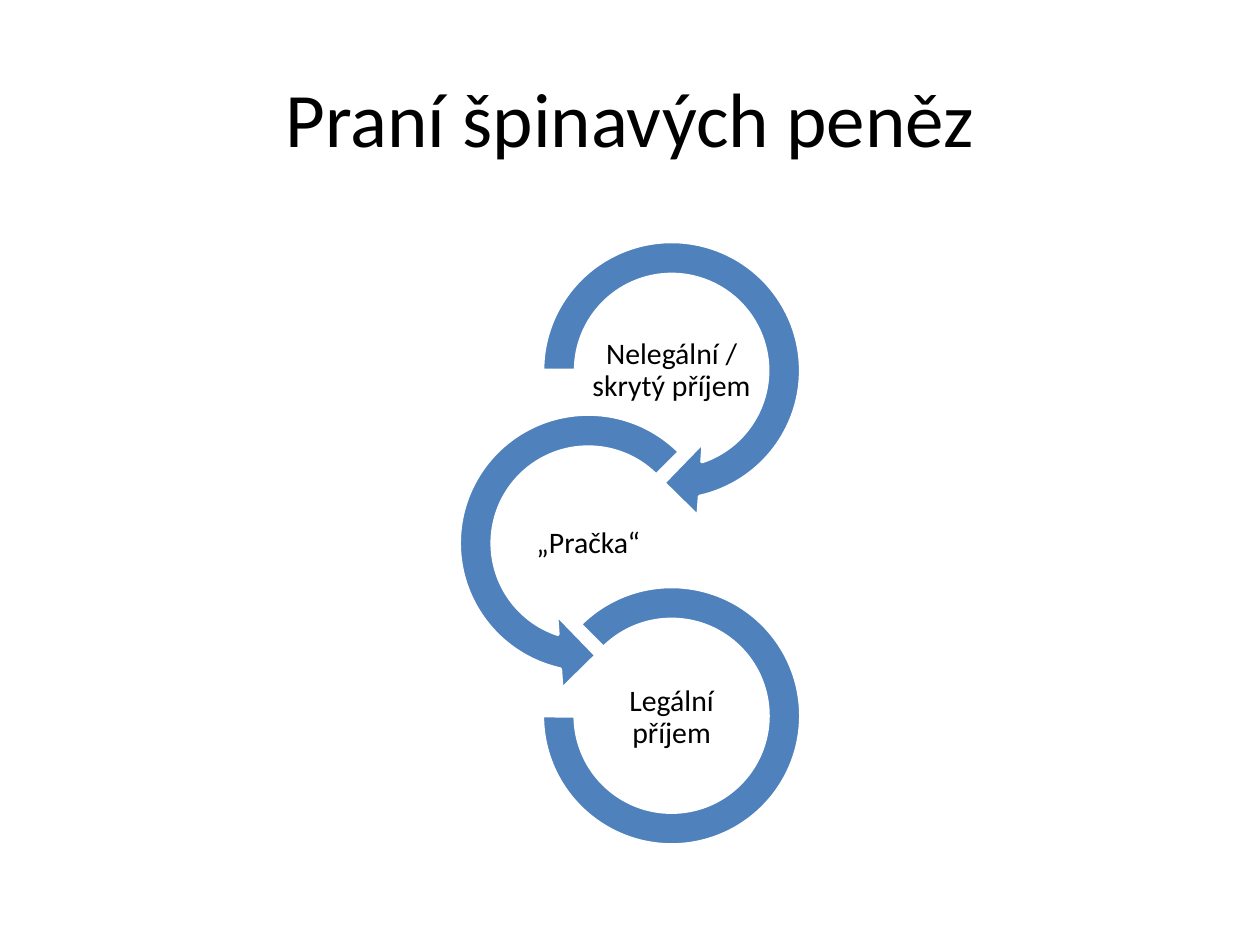
from pptx import Presentation
from pptx.dml.color import RGBColor
from pptx.enum.shapes import MSO_SHAPE
from pptx.enum.text import MSO_ANCHOR, PP_ALIGN
from pptx.util import Cm, Pt

RIGHT_TURN = MSO_SHAPE.CIRCULAR_ARROW
LEFT_TURN = MSO_SHAPE.LEFT_CIRCULAR_ARROW
RING = MSO_SHAPE.BLOCK_ARC
MIDDLE = MSO_ANCHOR.MIDDLE
CENTER = PP_ALIGN.CENTER

# Content: label, outline, diameter in cm, centre x in cm, adjustments
TITLE = "Praní špinavých peněz"
STAGES = [
    ("Nelegální / skrytý příjem", RIGHT_TURN, 6.05, 13.54,
     (0.11, 11.42, 45, 108, 0.125)),
    ("„Pračka“", LEFT_TURN, 6.05, 11.86, (0.11, 11.42, 63, 189, 0.125)),
    ("Legální příjem", RING, 5.21, 13.54, (135, 108, 0.127)),
]

THEME = {
    "font": "Calibri",
    "title_size": Pt(44),
    "label_size": Pt(17),
    "text": RGBColor(0x00, 0x00, 0x00),
    "arc": RGBColor(0x4F, 0x81, 0xBD),
    "edge": RGBColor(0xFF, 0xFF, 0xFF),
    "edge_width": Pt(2),
}

# Layout in cm
FIRST_CENTER_Y = 7.47
ARC_STEP = 3.48
LABEL_STEP = 3.5
LABEL_WIDTH, LABEL_HEIGHT = 3.36, 1.68
LABEL_INSET = 0.03


def centered(x, y, width, height):
    """Return left, top, width and height of a part centred on x, y."""
    return Cm(x - width / 2), Cm(y - height / 2), Cm(width), Cm(height)


def add_text(page, area, text, size, inset=None, spacing=None):
    box = page.shapes.add_textbox(*area)
    frame = box.text_frame
    frame.word_wrap = True
    frame.vertical_anchor = MIDDLE
    if inset is not None:
        frame.margin_left = frame.margin_right = Cm(inset)
        frame.margin_top = frame.margin_bottom = Cm(inset)
    para = frame.paragraphs[0]
    para.text = text
    para.alignment = CENTER
    para.line_spacing = spacing
    para.font.name = THEME["font"]
    para.font.size = size
    para.font.color.rgb = THEME["text"]


def add_arc(page, outline, area, adjustments):
    arc = page.shapes.add_shape(outline, *area)
    arc.shadow.inherit = False
    for index, value in enumerate(adjustments):
        arc.adjustments[index] = value
    arc.fill.solid()
    arc.fill.fore_color.rgb = THEME["arc"]
    arc.line.color.rgb = THEME["edge"]
    arc.line.width = THEME["edge_width"]


def main():
    deck = Presentation()
    deck.slide_width, deck.slide_height = Cm(25.4), Cm(19.05)
    page = deck.slides.add_slide(deck.slide_layouts[6])

    # Title
    title_area = Cm(1.27), Cm(0.76), Cm(22.86), Cm(3.18)
    add_text(page, title_area, TITLE, THEME["title_size"])

    # Chain of arcs, each with its label in the middle
    for index, (label, outline, size, x, adjustments) in enumerate(STAGES):
        arc_y = FIRST_CENTER_Y + index * ARC_STEP
        label_y = FIRST_CENTER_Y + index * LABEL_STEP
        add_arc(page, outline, centered(x, arc_y, size, size), adjustments)
        add_text(page, centered(x, label_y, LABEL_WIDTH, LABEL_HEIGHT), label,
                 THEME["label_size"], LABEL_INSET, 0.9)

    deck.save("out.pptx")


if __name__ == "__main__":
    main()
